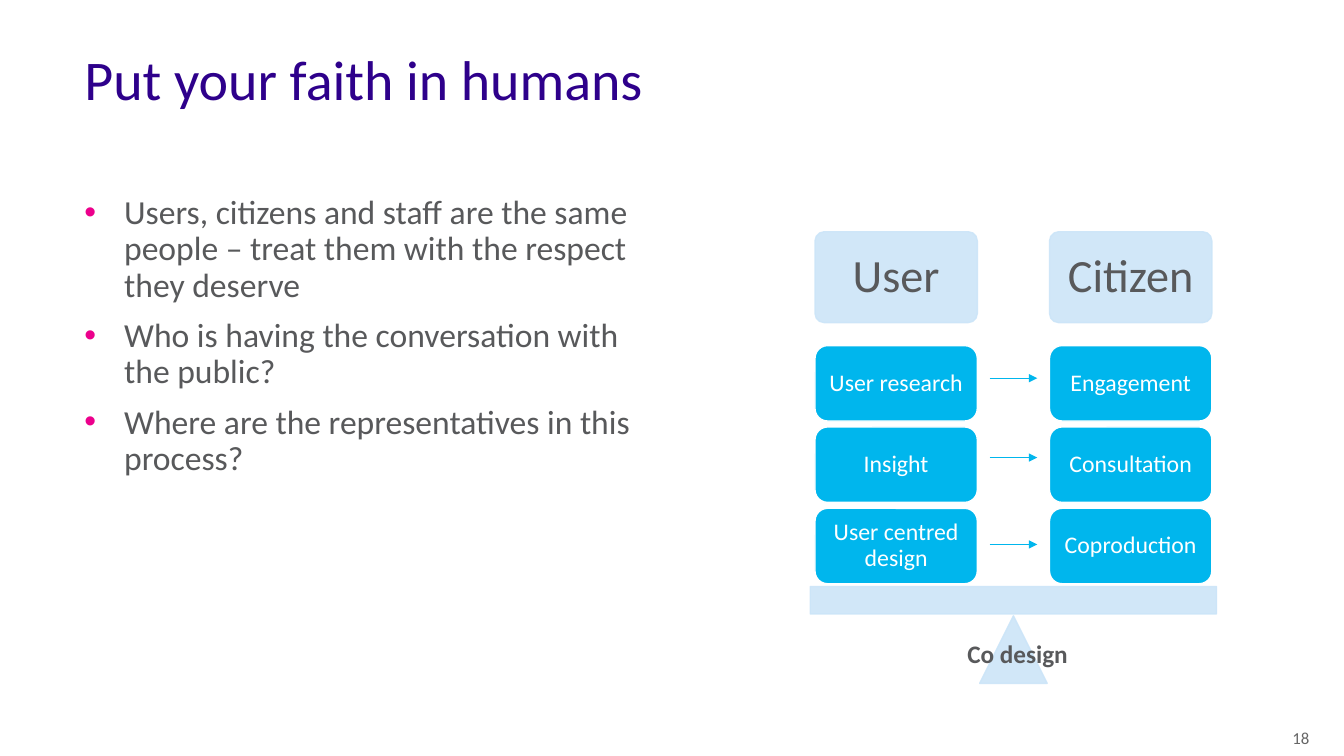
import pptx
import pptx.dml.color
import pptx.enum.dml
import pptx.enum.shapes
import pptx.enum.text
import pptx.oxml
import pptx.oxml.ns
import pptx.util

Cm, Pt = pptx.util.Cm, pptx.util.Pt
SHAPES = pptx.enum.shapes.MSO_SHAPE
ANCHOR = pptx.enum.text.MSO_ANCHOR
ALIGN = pptx.enum.text.PP_ALIGN
NAMESPACE = pptx.oxml.ns.nsdecls("a")
PALE, CYAN, WHITE, GREY = "CCE5F8", "00B6ED", "FFFFFF", "58595B"
COLUMNS = {
    "User": ["User research", "Insight", "User centred design"],
    "Citizen": ["Engagement", "Consultation", "Coproduction"],
}
POINTS = [
    "Users, citizens and staff are the same people – treat them with the respect they deserve",
    "Who is having the conversation with the public?",
    "Where are the representatives in this process?",
]
ARROW_HEIGHTS = [9.53, 11.53, 13.72]


def colour(value):
    """Turn a hex string into a colour."""
    return pptx.dml.color.RGBColor.from_string(value)


def apply(target, values):
    """Set each attribute in a dict of format values."""
    for name, value in values.items():
        setattr(target, name, value)


def element(xml):
    """Parse one drawing element, given without its namespace."""
    head, tail = xml.split(" ", 1)
    return pptx.oxml.parse_xml(f"{head} {NAMESPACE} {tail}")


def write(box, lines, size, ink, margins=(0, 0), anchor=ANCHOR.TOP, bold=False, **layout):
    """Write paragraphs into a box and return them."""
    side, edge = (Cm(margin) for margin in margins)
    frame = box.text_frame
    apply(frame, {"word_wrap": True, "vertical_anchor": anchor, "margin_left": side,
                  "margin_right": side, "margin_top": edge, "margin_bottom": edge})
    for index, line in enumerate(lines):
        para = frame.paragraphs[0] if index == 0 else frame.add_paragraph()
        apply(para, layout)
        span = para.add_run()
        span.text = line
        apply(span.font, {"name": "Calibri", "size": Pt(size), "bold": bold})
        span.font.color.rgb = colour(ink)
    return frame.paragraphs


def add_text(page, place, lines, size, ink, **layout):
    """Add a text box at a place in centimetres."""
    box = page.shapes.add_textbox(*map(Cm, place))
    return write(box, lines, size, ink, **layout)


def add_bullets(paras):
    """Give paragraphs a pink hanging bullet."""
    for para in paras:
        settings = para._p.get_or_add_pPr()
        apply(para, {"space_before": Pt(10)})
        settings.set("marL", str(Cm(1)))
        settings.set("indent", str(-Cm(1)))
        settings.append(element('<a:buClr ><a:srgbClr val="EC008C"/></a:buClr>'))
        settings.append(element('<a:buFont typeface="Arial"/>'))
        settings.append(element('<a:buChar char="•"/>'))


def add_block(page, kind, place, fill, outline):
    """Add a filled shape with a one point outline."""
    block = page.shapes.add_shape(kind, *map(Cm, place))
    block.shadow.inherit = False
    block.fill.solid()
    block.fill.fore_color.rgb = colour(fill)
    block.line.color.rgb = colour(outline)
    block.line.width = Pt(1)
    return block


def add_pale(page, kind, place):
    """Add a slightly transparent pale shape."""
    block = add_block(page, kind, place, PALE, PALE)
    for tint in block._element.spPr.iter(pptx.oxml.ns.qn("a:srgbClr")):
        tint.append(element('<a:alpha val="90000"/>'))
    return block


def add_column(page, left, heading, steps):
    """Add a heading and its stack of steps."""
    middle = {"anchor": ANCHOR.MIDDLE, "alignment": ALIGN.CENTER, "line_spacing": 0.9}
    top_box = add_pale(page, SHAPES.ROUNDED_RECTANGLE, (left, 5.84, 4.09, 2.29))
    top_box.adjustments[0] = 0.1
    write(top_box, [heading], 33, GREY, margins=(0.1, 0.1), **middle)
    for row, step in enumerate(steps):
        place = (left, 8.71 + row * 2.05, 4.09, 1.9)
        box = add_block(page, SHAPES.ROUNDED_RECTANGLE, place, CYAN, WHITE)
        write(box, [step], 17, WHITE, margins=(0.2, 0.2), **middle)


def add_arrow(page, height):
    """Add a thin arrow between the two columns."""
    arrow = page.shapes.add_connector(
        pptx.enum.shapes.MSO_CONNECTOR.STRAIGHT, Cm(24.94), Cm(height), Cm(26.14), Cm(height))
    arrow.line.color.rgb = colour(CYAN)
    arrow.line.width = Pt(0.5)
    arrow.line._get_or_add_ln().append(element('<a:tailEnd type="triangle"/>'))
    arrow._element.spPr.append(element("<a:effectLst />"))


def main():
    """Build and save the slide."""
    deck = pptx.Presentation()
    apply(deck, {"slide_width": Cm(33.87), "slide_height": Cm(19.05)})
    page = deck.slides.add_slide(deck.slide_layouts[6])

    add_text(page, (2.13, 1.32, 29.62, 1.55), ["Put your faith in humans"], 40, "2E008B",
             line_spacing=0.9)
    add_bullets(add_text(page, (2.13, 4.93, 14.6, 8.46), POINTS, 24, GREY, line_spacing=0.9))

    add_pale(page, SHAPES.ISOSCELES_TRIANGLE, (24.69, 15.52, 1.7, 1.7))
    add_pale(page, SHAPES.RECTANGLE, (20.42, 14.78, 10.24, 0.69))
    for index, (heading, steps) in enumerate(COLUMNS.items()):
        add_column(page, 20.54 + index * 5.91, heading, steps)
    for height in ARROW_HEIGHTS:
        add_arrow(page, height)

    add_text(page, (24.13, 15.95, 3.81, 1.8), ["Co design"], 18, GREY,
             margins=(0.25, 0.13), bold=True)
    add_text(page, (31.72, 18.14, 2.13, 0.91), ["18"], 12, "666666",
             margins=(0.2, 0.2), anchor=ANCHOR.BOTTOM, alignment=ALIGN.CENTER)
    deck.save("out.pptx")


if __name__ == "__main__":
    main()
